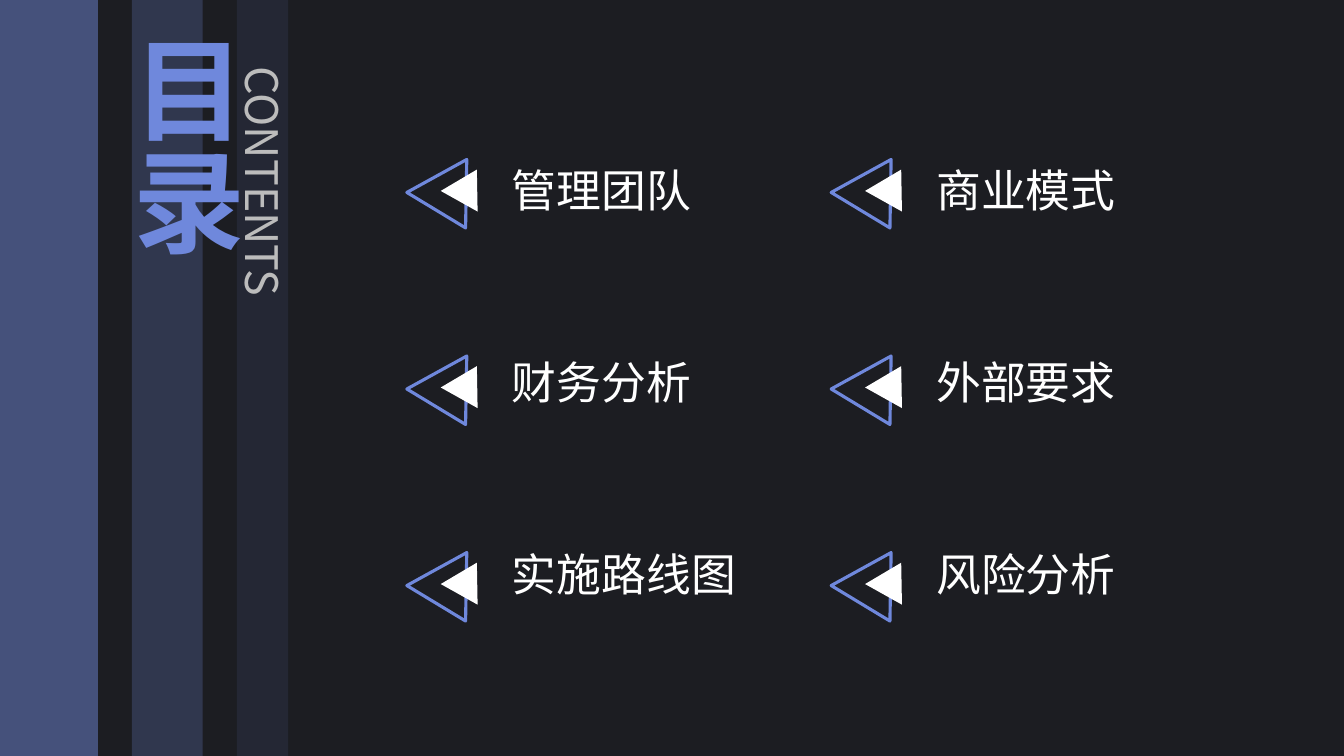
import pptx
import pptx.dml.color
import pptx.enum.shapes
import pptx.enum.text
import pptx.oxml.ns
import pptx.util
from lxml import etree

Pt = pptx.util.Pt
SHAPES = pptx.enum.shapes.MSO_SHAPE

COLORS = {
    "night": "1C1D22",
    "stripe": "6E85D5",
    "accent": "6F88DC",
    "subtitle": "BCBCBC",
    "white": "FFFFFF",
}
SANS = "Noto Sans CJK SC"
SERIF = "Times New Roman"

SLIDE_SIZE = (960, 540)
STRIPES = [(0, 70, 50), (94.3, 50.4, 25), (169.2, 36.7, 10)]
TITLE = ("目录", (103.7, 17.3, 56.9, 220.3), 80, "accent", True)
SUBTITLE = ("CONTENTS", (159.8, 40.3, 56.9, 427.7), 32, "subtitle", False)
TOPICS = [
    ["管理团队", "财务分析", "实施路线图"],
    ["商业模式", "外部要求", "风险分析"],
]
TOPIC_BOX = (358.6, 85, 185.8, 101.5)
OUTLINE_BOX = (298, 110.9, 49, 42.3)
ARROW_BOX = (319.2, 119.5, 30.2, 25.9)
COLUMN_STEP = 303.1
TOPIC_STEP = 136.8
MARKER_STEP = 140.4


def color(key):
    """Return the palette colour for a key."""
    return pptx.dml.color.RGBColor.from_string(COLORS[key])


def shifted(box, column, row, row_step):
    """Return a box moved to its grid cell."""
    left, top, width, height = box
    return left + column * COLUMN_STEP, top + row * row_step, width, height


def add_figure(slide, preset, box, fill=None, line=None, alpha=100, rotation=0):
    """Add a flat preset shape."""
    figure = slide.shapes.add_shape(preset, *map(Pt, box))
    figure.shadow.inherit = False
    figure.rotation = rotation
    if fill:
        figure.fill.solid()
        figure.fill.fore_color.rgb = color(fill)
        if alpha < 100:
            tint = figure.fill._xPr.find(".//" + pptx.oxml.ns.qn("a:srgbClr"))
            etree.SubElement(tint, pptx.oxml.ns.qn("a:alpha"), val=str(alpha * 1000))
    else:
        figure.fill.background()
    if line:
        figure.line.color.rgb = color(line)
        figure.line.width = Pt(2.25)
    else:
        figure.line.fill.background()


def add_label(slide, text, box, size, ink, bold=False, font=SANS, vertical=False):
    """Add a one-run text box, optionally set vertically."""
    label = slide.shapes.add_textbox(*map(Pt, box))
    frame = label.text_frame
    frame.word_wrap = True
    frame.vertical_anchor = pptx.enum.text.MSO_ANCHOR.MIDDLE
    if vertical:
        frame._txBody.bodyPr.set("vert", "eaVert")
    run = frame.paragraphs[0].add_run()
    run.text = text
    run.font.size = Pt(size)
    run.font.bold = bold
    run.font.name = font
    run.font.color.rgb = color(ink)
    east_asian = etree.Element(pptx.oxml.ns.qn("a:ea"), typeface=SANS)
    run.font._element.find(pptx.oxml.ns.qn("a:latin")).addnext(east_asian)


def main():
    """Build the contents slide."""
    deck = pptx.Presentation()
    deck.slide_width, deck.slide_height = map(Pt, SLIDE_SIZE)
    slide = deck.slides.add_slide(deck.slide_layouts[6])
    slide.background.fill.solid()
    slide.background.fill.fore_color.rgb = color("night")

    for left, width, alpha in STRIPES:
        stripe_box = (left, 0, width, SLIDE_SIZE[1])
        add_figure(slide, SHAPES.RECTANGLE, stripe_box, fill="stripe", alpha=alpha)

    for heading in (TITLE, SUBTITLE):
        add_label(slide, *heading, vertical=True)

    for column, topics in enumerate(TOPICS):
        for row, topic in enumerate(topics):
            topic_box = shifted(TOPIC_BOX, column, row, TOPIC_STEP)
            outline_box = shifted(OUTLINE_BOX, column, row, MARKER_STEP)
            arrow_box = shifted(ARROW_BOX, column, row, MARKER_STEP)
            add_label(slide, topic, topic_box, 32, "white", font=SERIF)
            add_figure(slide, SHAPES.ISOSCELES_TRIANGLE, outline_box,
                       line="accent", rotation=31.1)
            add_figure(slide, SHAPES.ISOSCELES_TRIANGLE, arrow_box,
                       fill="white", rotation=29.2)

    deck.save("out.pptx")


if __name__ == "__main__":
    main()
